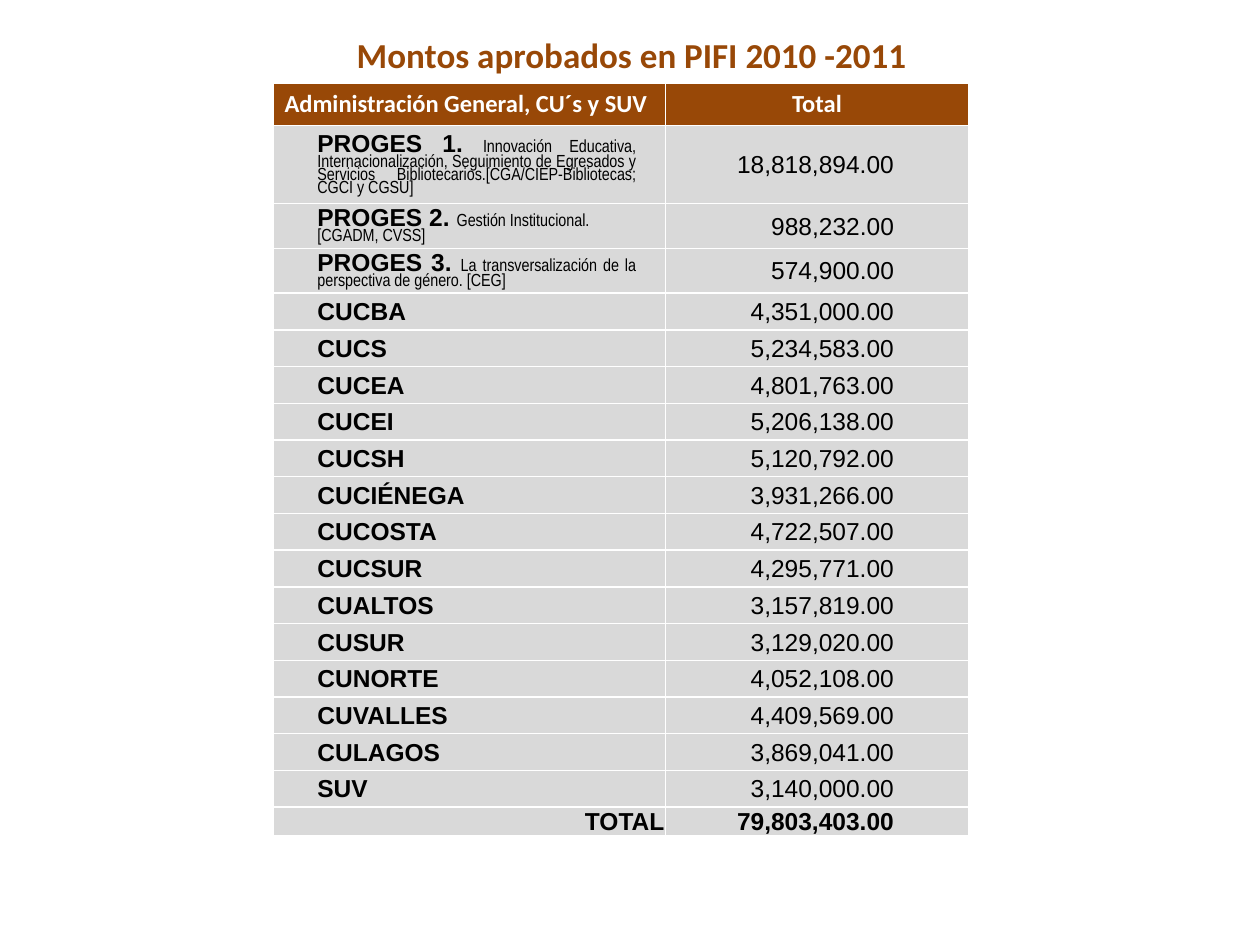
from pptx import Presentation
from pptx.dml.color import RGBColor
from pptx.enum.text import MSO_ANCHOR, PP_ALIGN
from pptx.util import Pt

LEFT, CENTER, RIGHT, JUSTIFY = PP_ALIGN.LEFT, PP_ALIGN.CENTER, PP_ALIGN.RIGHT, PP_ALIGN.JUSTIFY
TOP, MIDDLE = MSO_ANCHOR.TOP, MSO_ANCHOR.MIDDLE
BROWN, GRAY, WHITE, BLACK = "984807", "D9D9D9", "FFFFFF", "000000"

HEADING = {"name": "Calibri", "size": Pt(14), "bold": True}
LABEL = {"name": "Arial", "size": Pt(14), "bold": True}
AMOUNT = {"name": "Arial", "size": Pt(14), "bold": False}
NOTE = {"name": "Arial Narrow", "size": Pt(10), "bold": False}


def add_span(para, text, style, color):
    span = para.add_run()
    span.text = text
    for key, value in style.items():
        setattr(span.font, key, value)
    span.font.color.rgb = RGBColor.from_string(color)


def fill_cell(cell, spans, align, margins, fill=GRAY, color=BLACK, anchor=MIDDLE):
    cell.fill.solid()
    cell.fill.fore_color.rgb = RGBColor.from_string(fill)
    cell.vertical_anchor = anchor
    for side, margin in zip(("left", "top", "right", "bottom"), margins):
        setattr(cell, f"margin_{side}", Pt(margin))
    para = cell.text_frame.paragraphs[0]
    para.alignment = align
    if len(spans) > 1:
        para.line_spacing = 0.8
    for text, style in spans:
        add_span(para, text, style, color)


deck = Presentation()
deck.slide_width, deck.slide_height = Pt(720), Pt(540)
page = deck.slides.add_slide(deck.slide_layouts[5])

title = page.shapes.title
title.left, title.top, title.width, title.height = Pt(37), Pt(3.6), Pt(648), Pt(55.4)
title.text_frame.vertical_anchor = MIDDLE
title_para = title.text_frame.paragraphs[0]
title_para.alignment = CENTER
add_span(title_para, "Montos aprobados en PIFI 2010 -2011",
         {"name": "Calibri", "size": Pt(20), "bold": True}, BROWN)

programs = [
    ("PROGES 1. ", "Innovación Educativa, Internacionalización, Seguimiento de Egresados "
     "y Servicios Bibliotecarios.[CGA/CIEP-Bibliotecas; CGCI y CGSU]",
     "18,818,894.00", JUSTIFY, 44.5),
    ("PROGES 2. ", "Gestión Institucional. [CGADM, CVSS]", "988,232.00", LEFT, 25.6),
    ("PROGES 3. ", "La transversalización de la perspectiva de género. [CEG]",
     "574,900.00", JUSTIFY, 25.6),
]
centers = [
    ("CUCBA", "4,351,000.00"),
    ("CUCS", "5,234,583.00"),
    ("CUCEA", "4,801,763.00"),
    ("CUCEI", "5,206,138.00"),
    ("CUCSH", "5,120,792.00"),
    ("CUCIÉNEGA", "3,931,266.00"),
    ("CUCOSTA", "4,722,507.00"),
    ("CUCSUR", "4,295,771.00"),
    ("CUALTOS", "3,157,819.00"),
    ("CUSUR", "3,129,020.00"),
    ("CUNORTE", "4,052,108.00"),
    ("CUVALLES", "4,409,569.00"),
    ("CULAGOS", "3,869,041.00"),
    ("SUV", "3,140,000.00"),
]
label_margins = (25, 0.7, 17, 0)
amount_margins = (0.7, 0.7, 42.5, 0)
total_margins = (0.7, 0.7, 0.7, 0)

rows = [([(name, LABEL), (note, NOTE)], align, label_margins, amount, AMOUNT, height)
        for name, note, amount, align, height in programs]
rows += [([(name, LABEL)], LEFT, label_margins, amount, AMOUNT, 21)
         for name, amount in centers]
rows.append(([("TOTAL", LABEL)], RIGHT, total_margins, "79,803,403.00", LABEL, 16.5))

heights = [24] + [row[-1] for row in rows]
widths = [224, 173]
table = page.shapes.add_table(len(heights), len(widths), Pt(156.4), Pt(47.6),
                              Pt(sum(widths)), Pt(sum(heights))).table
table.horz_banding = False
for column, width in zip(table.columns, widths):
    column.width = Pt(width)
for row, height in zip(table.rows, heights):
    row.height = Pt(height)

headings = [("Administración General, CU´s y SUV", (3, 3.6, 7.2, 3.6)),
            ("Total", (7.2, 3.6, 7.2, 3.6))]
for index, (text, margins) in enumerate(headings):
    fill_cell(table.cell(0, index), [(text, HEADING)], CENTER, margins, BROWN, WHITE, TOP)

for index, (spans, align, margins, amount, style, height) in enumerate(rows, 1):
    fill_cell(table.cell(index, 0), spans, align, margins)
    fill_cell(table.cell(index, 1), [(amount, style)], RIGHT, amount_margins)

deck.save("out.pptx")
